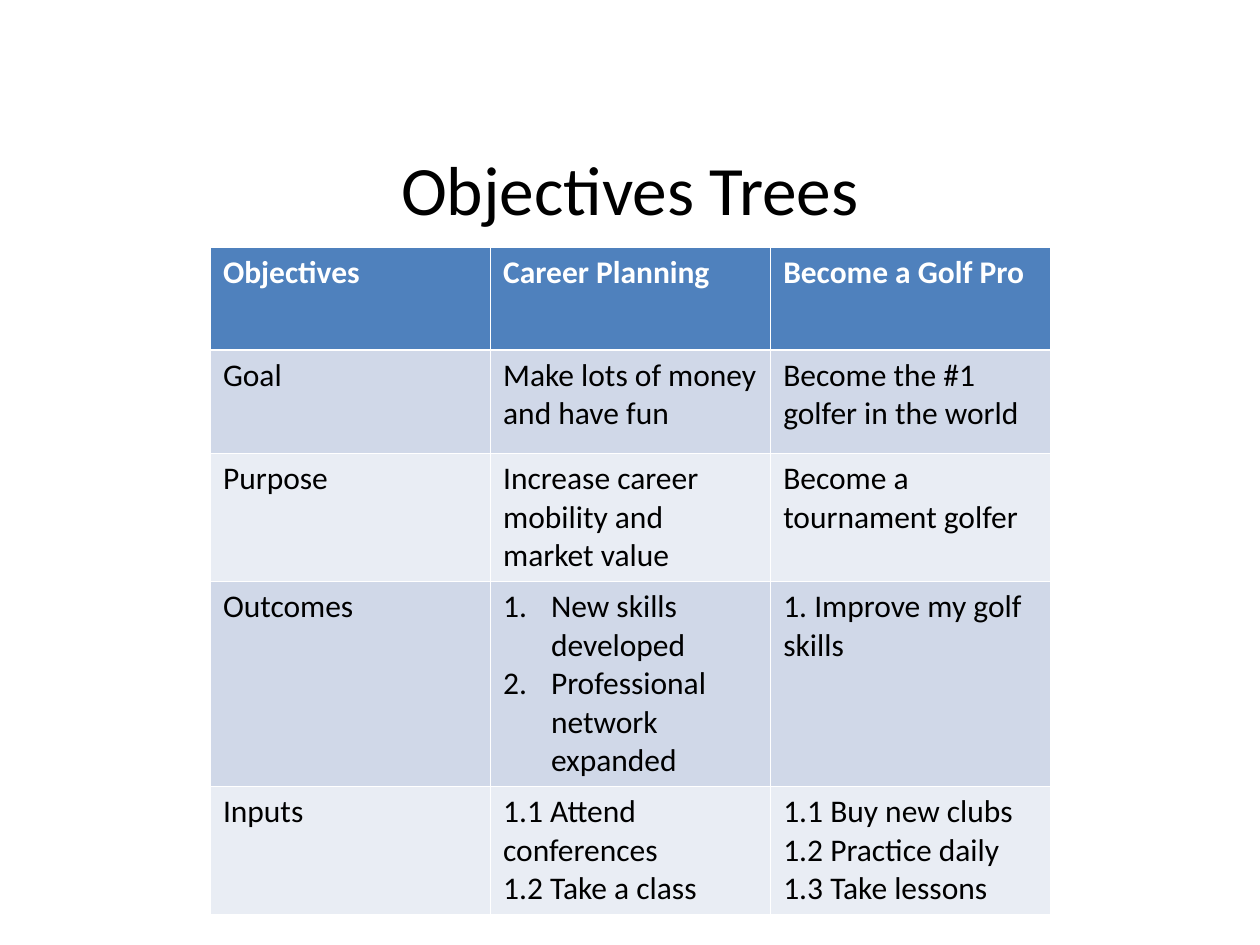
from dataclasses import dataclass

from lxml import etree
from pptx import Presentation
from pptx.dml.color import RGBColor
from pptx.enum.text import MSO_ANCHOR, PP_ALIGN
from pptx.oxml.ns import qn
from pptx.util import Inches, Pt

BOTTOM = MSO_ANCHOR.BOTTOM
CENTER = PP_ALIGN.CENTER
TITLE_ONLY = 5
FONT = "Calibri"
COLORS = {
    "header": "4F81BD",
    "odd": "D0D8E8",
    "even": "E9EDF4",
    "light": "FFFFFF",
    "dark": "000000",
}
LEFT, TOP, WIDTH, ROW_HEIGHT = 1.67, 1.96, 6.67, 0.82
NUMBER_INDENT = 0.38


@dataclass
class Entry:
    lines: list[str]
    numbered: bool = False


ROWS = [
    [Entry(["Objectives"]), Entry(["Career Planning"]), Entry(["Become a Golf Pro"])],
    [Entry(["Goal"]), Entry(["Make lots of money and have fun"]),
     Entry(["Become the #1 golfer in the world"])],
    [Entry(["Purpose"]), Entry(["Increase career mobility and market value"]),
     Entry(["Become a tournament golfer"])],
    [Entry(["Outcomes"]),
     Entry(["New skills developed", "Professional network expanded"], numbered=True),
     Entry(["1. Improve my golf skills"])],
    [Entry(["Inputs"]), Entry(["1.1 Attend conferences", "1.2 Take a class"]),
     Entry(["1.1 Buy new clubs", "1.2 Practice daily", "1.3 Take lessons"])],
]


def rgb(name: str) -> RGBColor:
    return RGBColor.from_string(COLORS[name])


def format_font(font, color: str, **values) -> None:
    for name, value in {"name": FONT, **values}.items():
        setattr(font, name, value)
    font.color.rgb = rgb(color)


def number_paragraph(p) -> None:
    """Give the paragraph an automatic number and a hanging indent."""
    pPr = p._p.get_or_add_pPr()
    indent = Inches(NUMBER_INDENT)
    pPr.set("marL", str(indent))
    pPr.set("indent", str(-indent))
    etree.SubElement(pPr, qn("a:buFont"), typeface="+mj-lt")
    etree.SubElement(pPr, qn("a:buAutoNum"), type="arabicPeriod")


def add_title(slide, text: str) -> None:
    title = slide.shapes.title
    box = {"left": 0.5, "top": 0.76, "width": 9, "height": 1.06}
    for name, value in box.items():
        setattr(title, name, Inches(value))
    tf = title.text_frame
    tf.text = text
    tf.vertical_anchor = BOTTOM
    tf.margin_top = tf.margin_bottom = 0
    p = tf.paragraphs[0]
    p.alignment = CENTER
    format_font(p.runs[0].font, "dark", size=Pt(39.6))


def fill_cell(cell, entry: Entry, fill: str, is_header: bool) -> None:
    cell.fill.solid()
    cell.fill.fore_color.rgb = rgb(fill)
    tf = cell.text_frame
    tf.text = "\n".join(entry.lines)
    for p in tf.paragraphs:
        if entry.numbered:
            number_paragraph(p)
        format_font(p.runs[0].font, "light" if is_header else "dark",
                    size=Pt(18), bold=is_header)


def add_objectives_table(slide, rows: list[list[Entry]]) -> None:
    table = slide.shapes.add_table(
        len(rows), len(rows[0]), Inches(LEFT), Inches(TOP),
        Inches(WIDTH), Inches(ROW_HEIGHT * len(rows))).table
    for i, row in enumerate(rows):
        fill = "header" if i == 0 else "odd" if i % 2 else "even"
        for j, entry in enumerate(row):
            fill_cell(table.cell(i, j), entry, fill, i == 0)


def main() -> None:
    prs = Presentation()
    prs.slide_width, prs.slide_height = Inches(10), Inches(7.5)
    slide = prs.slides.add_slide(prs.slide_layouts[TITLE_ONLY])
    add_title(slide, "Objectives Trees")
    add_objectives_table(slide, ROWS)
    prs.save("out.pptx")


if __name__ == "__main__":
    main()
